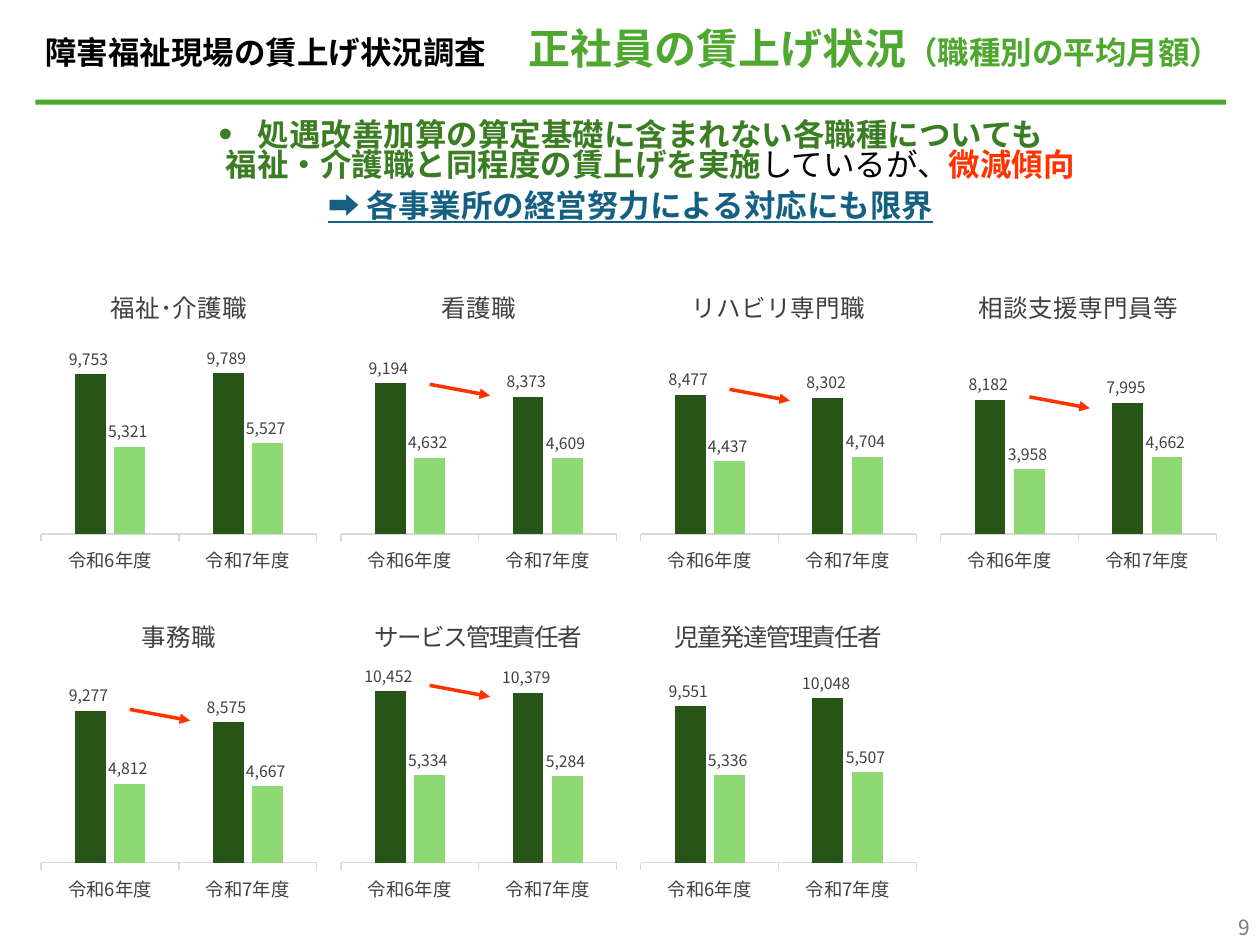
from lxml.etree import SubElement as Sub
from pptx import Presentation
from pptx.chart.data import CategoryChartData as Data
from pptx.dml.color import RGBColor as RGB
from pptx.enum.chart import XL_CHART_TYPE as Kind, XL_LABEL_POSITION as Spot
from pptx.enum.chart import XL_TICK_LABEL_POSITION as Tick, XL_TICK_MARK as Mark
from pptx.enum.shapes import MSO_CONNECTOR as Link, MSO_SHAPE as Form
from pptx.enum.text import MSO_ANCHOR as Anchor, PP_ALIGN as Align
from pptx.oxml.ns import qn
from pptx.util import Inches, Pt

FONT = "Noto Sans CJK JP"
BLACK = RGB(0x00, 0x00, 0x00)
GREEN = RGB(0x4E, 0xA7, 0x2E)
LEAF = RGB(0x3B, 0x7D, 0x23)
RED = RGB(0xFF, 0x33, 0x00)
BLUE = RGB(0x15, 0x60, 0x82)
GRAY = RGB(0x79, 0x79, 0x79)
TEXT = RGB(0x40, 0x40, 0x40)
RULE = RGB(0xD9, 0xD9, 0xD9)
DARK = RGB(0x27, 0x54, 0x17)
LIGHT = RGB(0x8E, 0xD9, 0x73)

# Chart grid in inches: first cell, steps and cell size
LEFT, TOP = 0.28, 2.13
STEP_X, STEP_Y = 2.38, 2.61
WIDE, HIGH = 2.28, 2.48
# Plot area as shares of a chart
PLOT = {"x": 0.02, "y": 0.22, "w": 0.96, "h": 0.63}

YEARS = ["令和6年度", "令和7年度"]
# Title, column, row, dark bars, light bars, arrow start below cell top, title spacing
JOBS = [
    ("福祉･介護職", 0, 0, (9753, 9789), (5321, 5527), None, 0),
    ("看護職", 1, 0, (9194, 8373), (4632, 4609), 0.92, 0),
    ("リハビリ専門職", 2, 0, (8477, 8302), (4437, 4704), 0.96, 0),
    ("相談支援専門員等", 3, 0, (8182, 7995), (3958, 4662), 1.02, 0),
    ("事務職", 0, 1, (9277, 8575), (4812, 4667), 0.89, 0),
    ("サービス管理責任者", 1, 1, (10452, 10379), (5334, 5284), 0.7, -120),
    ("児童発達管理責任者", 2, 1, (9551, 10048), (5336, 5507), None, -120),
]


def put(thing, **vals):
    for key, val in vals.items():
        setattr(thing, key, val)


def style(font, size, color, **more):
    """Set size, colour and both Latin and East Asian typefaces."""
    put(font, name=FONT, size=Pt(size), **more)
    font.color.rgb = color
    Sub(font._element if hasattr(font, "_element") else font._rPr,
        qn("a:ea"), typeface=FONT)


def text_box(slide, at, anchor=Anchor.TOP, wrap=True):
    frame = slide.shapes.add_textbox(*map(Inches, at)).text_frame
    put(frame, word_wrap=wrap, vertical_anchor=anchor,
        margin_left=Inches(0.08), margin_right=Inches(0.08),
        margin_top=Inches(0.04), margin_bottom=Inches(0.04))
    return frame


def add_runs(para, runs):
    for text, size, color, more in runs:
        for i, line in enumerate(text.split("\n")):
            if i:
                para.add_line_break()
            run = para.add_run()
            run.text = line
            style(run.font, size, color, **more)


def add_bullet(para, indent):
    props = para._p.get_or_add_pPr()
    props.set("marL", str(Inches(indent)))
    props.set("indent", str(-Inches(indent)))
    Sub(props, qn("a:buSzPct"), val="125000")
    Sub(props, qn("a:buFont"), typeface="Arial")
    Sub(props, qn("a:buChar"), char="•")


def add_bar(slide, at, color):
    bar = slide.shapes.add_shape(Form.RECTANGLE, *map(Inches, at))
    bar.shadow.inherit = False
    bar.fill.solid()
    bar.fill.fore_color.rgb = color
    bar.line.fill.background()


def add_arrow(slide, x, y):
    ends = map(Inches, (x, y, x + 0.48, y + 0.09))
    arrow = slide.shapes.add_connector(Link.STRAIGHT, *ends)
    arrow.line.color.rgb = RED
    arrow.line.width = Pt(2)
    Sub(arrow.line._get_or_add_ln(), qn("a:tailEnd"), type="triangle")
    Sub(arrow._element.spPr, qn("a:effectLst"))


def fix_plot(chart):
    """Give every chart the same inner plot area."""
    area = chart._chartSpace.chart.plotArea
    for old in area.findall(qn("c:layout")):
        area.remove(old)
    box = Sub(area, qn("c:layout"))
    area.insert(0, box)
    lay = Sub(box, qn("c:manualLayout"))
    Sub(lay, qn("c:layoutTarget"), val="inner")
    for key in "xy":
        Sub(lay, qn(f"c:{key}Mode"), val="edge")
    for key, val in PLOT.items():
        Sub(lay, qn(f"c:{key}"), val=str(val))


def add_bars(slide, x, y, name, dark, light, space):
    data = Data()
    data.categories = YEARS
    data.add_series("Series 1", dark)
    data.add_series("Series 2", light)
    at = map(Inches, (x, y, WIDE, HIGH))
    chart = slide.shapes.add_chart(Kind.COLUMN_CLUSTERED, *at, data).chart
    style(chart.font, 12, TEXT)
    put(chart, has_legend=False, has_title=True)

    # Title
    para = chart.chart_title.text_frame.paragraphs[0]
    add_runs(para, [(name, 14, TEXT, {"bold": False})])
    if space:
        para.runs[0].font._element.set("spc", str(space))

    # Axes
    put(chart.value_axis, visible=False, has_major_gridlines=False,
        minimum_scale=0, maximum_scale=12000)
    axis = chart.category_axis
    put(axis, major_tick_mark=Mark.OUTSIDE, minor_tick_mark=Mark.NONE,
        tick_label_position=Tick.LOW)
    style(axis.tick_labels.font, 10.5, TEXT)
    axis.format.line.color.rgb = RULE
    axis.format.line.width = Pt(0.75)

    # Columns and their labels
    plot = chart.plots[0]
    put(plot, gap_width=219, overlap=-27, vary_by_categories=False)
    for row, color in zip(plot.series, (DARK, LIGHT)):
        row.format.fill.solid()
        row.format.fill.fore_color.rgb = color
        put(row.data_labels, show_value=True, position=Spot.OUTSIDE_END,
            number_format=r"#,##0_);[Red]\(#,##0\)",
            number_format_is_linked=False)
        style(row.data_labels.font, 9, TEXT)
    fix_plot(chart)


def add_head(slide):
    bold = {"bold": True}
    add_bar(slide, (LEFT, 0.79, 9.45, 0.04), GREEN)
    para = text_box(slide, (LEFT, 0.18, 9.72, 0.44), Anchor.MIDDLE).paragraphs[0]
    para.line_spacing = 0.9
    add_runs(para, [("障害福祉現場の賃上げ状況調査", 18, BLACK, bold),
                    ("\u3000", 24, BLACK, bold),
                    ("正社員の賃上げ状況", 24, GREEN, bold),
                    ("（職種別の平均月額）", 18, GREEN, bold)])


def add_message(slide):
    bold = {"bold": True}
    frame = text_box(slide, (LEFT, 0.93, 9.45, 1.07))
    first, last = frame.paragraphs[0], frame.add_paragraph()
    for para in (first, last):
        put(para, alignment=Align.CENTER, line_spacing=0.8, space_after=Pt(6))
    add_bullet(first, 0.31)
    add_runs(first, [
        ("処遇改善加算の算定基礎に含まれない各職種についても\n"
         "福祉・介護職と同程度の賃上げを実施", 18, LEAF, bold),
        ("しているが、", 18, BLACK, {"bold": False}),
        ("微減傾向", 18, RED, bold)])
    add_runs(last, [("➡ 各事業所の経営努力による対応にも限界", 18, BLUE,
                     {"bold": True, "underline": True})])


def main():
    deck = Presentation()
    put(deck, slide_width=Inches(10), slide_height=Inches(7.5))
    slide = deck.slides.add_slide(deck.slide_layouts[6])
    add_head(slide)
    add_message(slide)

    # Charts, then arrows on top
    drops = []
    for name, col, row, dark, light, drop, space in JOBS:
        x, y = LEFT + col * STEP_X, TOP + row * STEP_Y
        add_bars(slide, x, y, name, dark, light, space)
        if drop:
            drops.append((x + 0.75, y + drop))
    for x, y in drops:
        add_arrow(slide, x, y)

    # Page number
    para = text_box(slide, (9.41, 7.22, 0.59, 0.28), Anchor.BOTTOM).paragraphs[0]
    para.alignment = Align.RIGHT
    add_runs(para, [("9", 12, GRAY, {})])
    deck.save("out.pptx")


if __name__ == "__main__":
    main()
